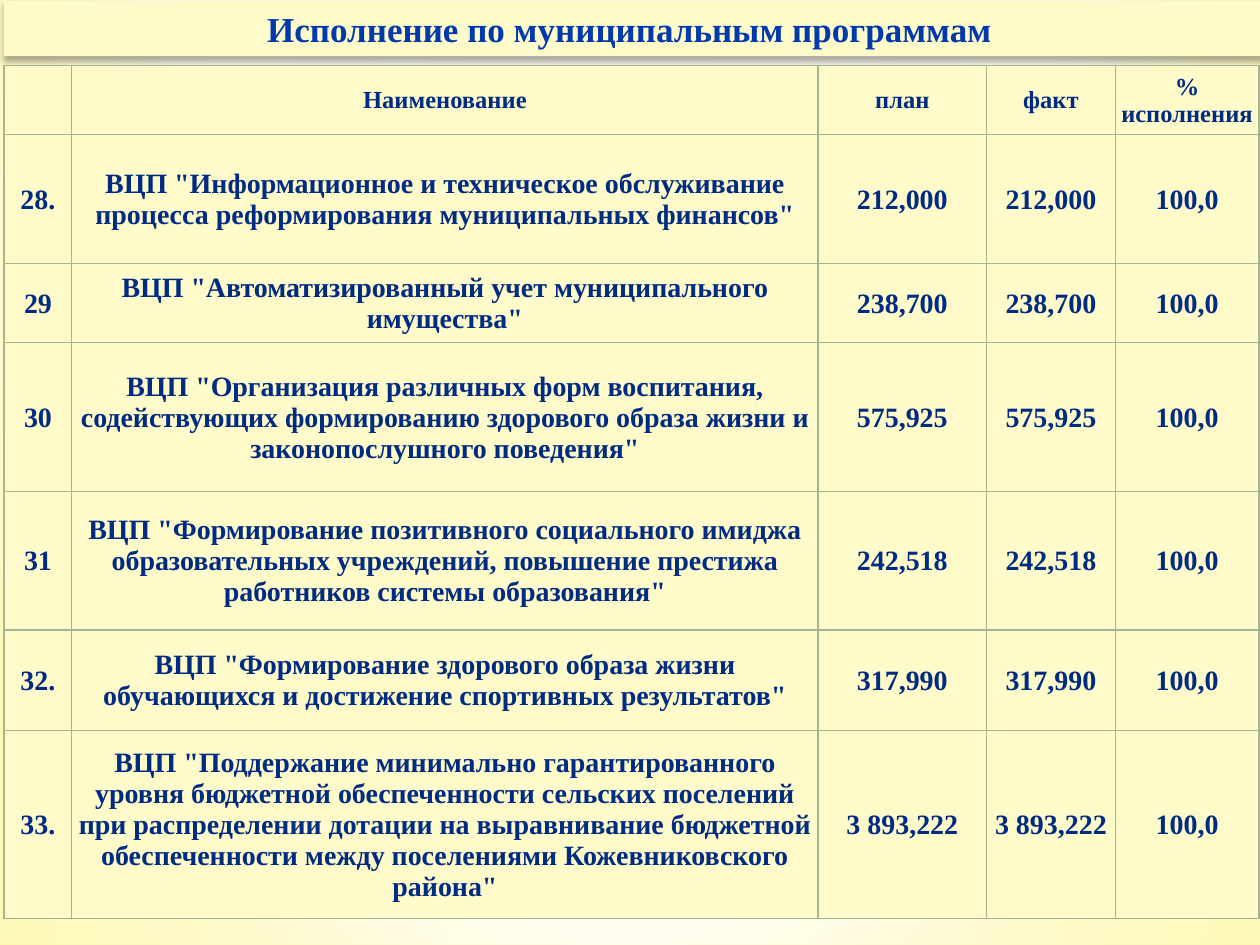
from lxml import etree
from pptx import Presentation
from pptx.dml.color import RGBColor
from pptx.enum.shapes import MSO_SHAPE
from pptx.enum.text import MSO_ANCHOR, PP_ALIGN
from pptx.oxml import parse_xml
from pptx.oxml.ns import nsdecls, qn
from pptx.util import Cm, Pt

RECTANGLE = MSO_SHAPE.RECTANGLE
MIDDLE = MSO_ANCHOR.MIDDLE
CENTER = PP_ALIGN.CENTER

CREAM = RGBColor(0xFE, 0xFA, 0xC9)
TITLE_BLUE = RGBColor(0x00, 0x39, 0xAC)
TEXT_BLUE = RGBColor(0x00, 0x2B, 0x82)
BORDER_GREEN = RGBColor(0xA5, 0xB5, 0x92)
WHITE = RGBColor(0xFF, 0xFF, 0xFF)
PALE_YELLOW = RGBColor(0xFF, 0xF9, 0xB5)
YELLOW = RGBColor(0xFF, 0xF4, 0x6F)
BLACK = RGBColor(0x00, 0x00, 0x00)
FONT = "Times New Roman"

TITLE = "Исполнение по муниципальным программам "
HEADER = ("", "Наименование", "план", "факт", "% исполнения")
PROGRAMS = [
    ("28.", 'ВЦП "Информационное и техническое обслуживание процесса '
            'реформирования муниципальных финансов"', "212,000", "212,000", "100,0"),
    ("29", 'ВЦП "Автоматизированный учет муниципального имущества"',
     "238,700", "238,700", "100,0"),
    ("30", 'ВЦП "Организация различных форм воспитания, содействующих формированию '
           'здорового образа жизни и законопослушного поведения"',
     "575,925", "575,925", "100,0"),
    ("31", 'ВЦП "Формирование позитивного социального имиджа образовательных '
           'учреждений, повышение престижа работников системы образования"',
     "242,518", "242,518", "100,0"),
    ("32.", 'ВЦП "Формирование здорового образа жизни обучающихся и достижение '
            'спортивных результатов"', "317,990", "317,990", "100,0"),
    ("33.", 'ВЦП "Поддержание минимально гарантированного уровня бюджетной '
            'обеспеченности сельских поселений при распределении дотации на '
            'выравнивание бюджетной обеспеченности между поселениями '
            'Кожевниковского района"', "3 893,222", "3 893,222", "100,0"),
]
COLUMN_WIDTHS = (1.37, 15.04, 3.4, 2.59, 2.9)
ROW_HEIGHTS = (1.4, 2.59, 1.6, 3, 2.79, 2.03, 3.78)

SLIDE_WIDTH, SLIDE_HEIGHT, HORIZON = 25.4, 19.05, 14.17
BACKDROP = [(0, PALE_YELLOW, 100), (60, WHITE, 100), (100, YELLOW, 100)]
GLOWS = [
    (HORIZON, SLIDE_HEIGHT, [(0, WHITE, 91), (37, WHITE, 76), (100, CREAM, 79)]),
    (0, HORIZON, [(0, WHITE, 89), (48, WHITE, 62), (100, CREAM, 79)]),
]


def paint_radial(fill, properties, stops, focus):
    """Replace the fill held by properties with a circular gradient."""
    fill.solid()
    stop_xml = "".join(
        f'<a:gs pos="{position * 1000}"><a:srgbClr val="{color}">'
        f'<a:alpha val="{opacity * 1000}"/></a:srgbClr></a:gs>'
        for position, color, opacity in stops)
    left, top, right, bottom = (percent * 1000 for percent in focus)
    gradient = parse_xml(
        f'<a:gradFill {nsdecls("a")} rotWithShape="1"><a:gsLst>{stop_xml}</a:gsLst>'
        f'<a:path path="circle"><a:fillToRect l="{left}" t="{top}" r="{right}" '
        f'b="{bottom}"/></a:path></a:gradFill>')
    properties.replace(properties.find(qn("a:solidFill")), gradient)


def add_backdrop(slide):
    """Paint the background and the two glows over it."""
    fill = slide.background.fill
    fill.solid()
    paint_radial(fill, next(slide.element.iter(qn("p:bgPr"))), BACKDROP, (20, 10, 20, 60))
    for top, bottom, stops in GLOWS:
        glow = slide.shapes.add_shape(
            RECTANGLE, 0, Cm(top), Cm(SLIDE_WIDTH), Cm(bottom - top))
        glow.shadow.inherit = False
        glow.line.fill.background()
        paint_radial(glow.fill, glow.element.spPr, stops, (50, 50, 50, 50))


def write(frame, text, size, color):
    """Put centred bold text in a frame."""
    frame.text = text
    paragraph = frame.paragraphs[0]
    paragraph.alignment = CENTER
    paragraph.font.name = FONT
    paragraph.font.size = Pt(size)
    paragraph.font.bold = True
    paragraph.font.color.rgb = color


def add_title(slide):
    """Set the title as a shadowed strip in front of the backdrop."""
    title = slide.shapes.title
    title.left, title.top, title.width, title.height = Cm(0.08), Cm(0.02), Cm(25.4), Cm(1.11)
    title.fill.solid()
    title.fill.fore_color.rgb = CREAM
    title.shadow.inherit = False
    title.element.spPr.find(qn("a:effectLst")).append(parse_xml(
        f'<a:outerShdw {nsdecls("a")} blurRad="{Pt(3.5)}" dist="{Pt(2.2)}" dir="5400000" '
        f'rotWithShape="0"><a:srgbClr val="{BLACK}"><a:alpha val="32000"/></a:srgbClr>'
        f'</a:outerShdw>'))
    title.text_frame.vertical_anchor = MIDDLE
    write(title.text_frame, TITLE, 20, TITLE_BLUE)
    slide.shapes.element.append(title.element)


def format_cell(cell):
    """Give a cell its borders, fill and insets."""
    properties = cell._tc.get_or_add_tcPr()
    for side in ("lnL", "lnR", "lnT", "lnB"):
        border = etree.SubElement(properties, qn(f"a:{side}"), w=str(Pt(0.75)))
        solid = etree.SubElement(border, qn("a:solidFill"))
        etree.SubElement(solid, qn("a:srgbClr"), val=str(BORDER_GREEN))
    cell.fill.solid()
    cell.fill.fore_color.rgb = CREAM
    cell.vertical_anchor = MIDDLE
    cell.margin_left = cell.margin_right = cell.margin_top = Cm(0.02)
    cell.margin_bottom = 0


def add_programs(slide):
    """Build the table of programs."""
    rows = [HEADER, *PROGRAMS]
    table = slide.shapes.add_table(
        len(rows), len(HEADER), Cm(0.08), Cm(1.32),
        Cm(sum(COLUMN_WIDTHS)), Cm(sum(ROW_HEIGHTS))).table
    for column, width in zip(table.columns, COLUMN_WIDTHS):
        column.width = Cm(width)
    for index, (values, height) in enumerate(zip(rows, ROW_HEIGHTS)):
        table.rows[index].height = Cm(height)
        for cell, value in zip(table.rows[index].cells, values):
            format_cell(cell)
            write(cell.text_frame, value, 16 if index else 14, TEXT_BLUE)


def main():
    """Build and save the slide."""
    presentation = Presentation()
    presentation.slide_width, presentation.slide_height = Cm(SLIDE_WIDTH), Cm(SLIDE_HEIGHT)
    slide = presentation.slides.add_slide(presentation.slide_layouts[5])
    add_backdrop(slide)
    add_title(slide)
    add_programs(slide)
    presentation.save("out.pptx")


if __name__ == "__main__":
    main()
